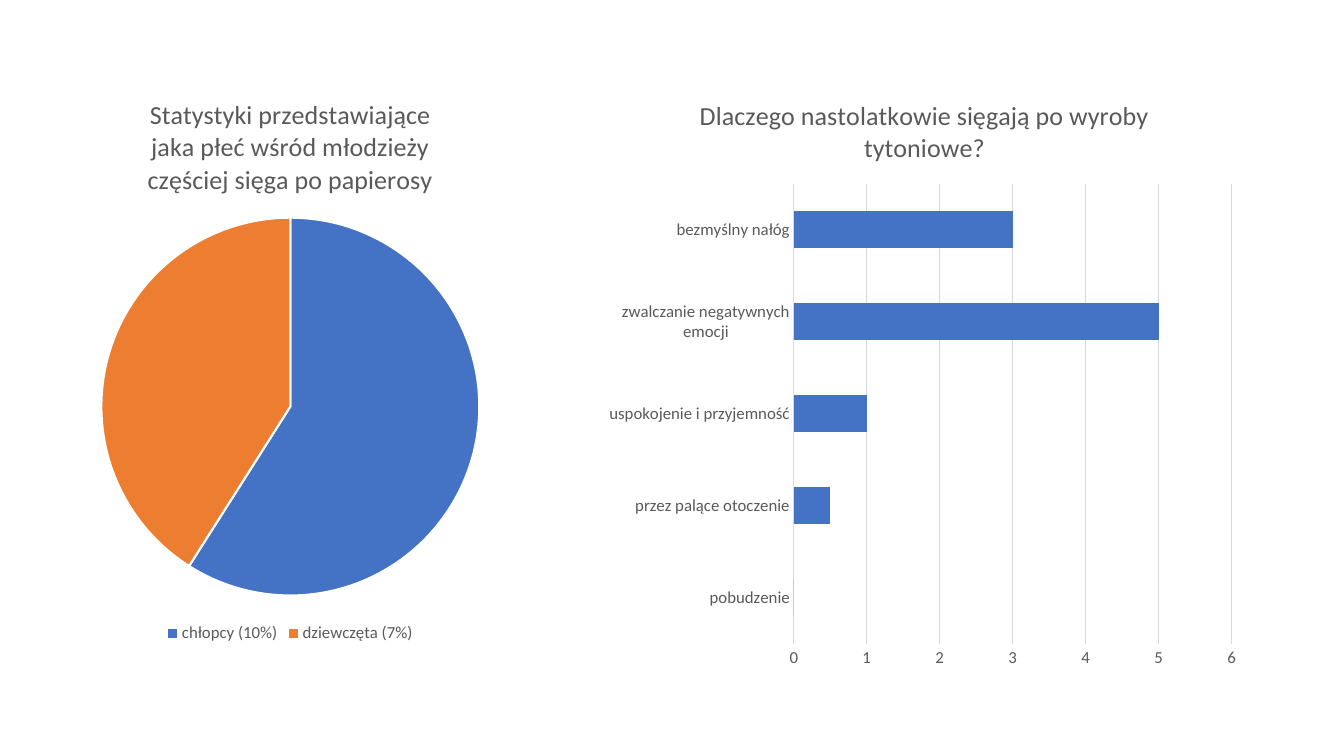
from lxml import etree
from pptx import Presentation
from pptx import util as u
from pptx.chart.data import CategoryChartData
from pptx.dml.color import RGBColor
from pptx.enum import chart as kinds
from pptx.oxml.ns import qn

theme = {
    "font": "Calibri", "title": 18.6, "label": 12,
    "text": RGBColor.from_string("595959"),
    "grid": RGBColor.from_string("D9D9D9"),
    "blue": RGBColor.from_string("4472C4"),
    "orange": RGBColor.from_string("ED7D31"),
    "white": RGBColor.from_string("FFFFFF"),
}

deck = Presentation()
deck.slide_width, deck.slide_height = u.Inches(13.33), u.Inches(7.5)
page = deck.slides.add_slide(deck.slide_layouts[6])


def style_font(font, size):
    font.name = theme["font"]
    font.size = u.Pt(size)
    font.bold = False
    font.color.rgb = theme["text"]


def add_titled_chart(kind, title, values, frame, plot):
    data = CategoryChartData()
    data.categories = list(values)
    data.add_series(title, list(values.values()))
    left, top, width, height = (u.Inches(length) for length in frame)
    chart = page.shapes.add_chart(kind, left, top, width, height, data).chart
    style_font(chart.font, theme["label"])
    chart.has_title = True
    box = chart.chart_title.text_frame
    box.text = title
    style_font(box.paragraphs[0].runs[0].font, theme["title"])
    chart.chart_title.include_in_layout = False

    area = chart.element.find(".//" + qn("c:plotArea"))
    for layout in area.findall(qn("c:layout")):
        area.remove(layout)
    layout = etree.Element(qn("c:layout"))
    manual = etree.SubElement(layout, qn("c:manualLayout"))
    settings = [("layoutTarget", "inner"), ("xMode", "edge"), ("yMode", "edge"), *zip("xywh", plot)]
    for name, value in settings:
        etree.SubElement(manual, qn("c:" + name)).set("val", str(value))
    area.insert(0, layout)
    return chart


gender = add_titled_chart(
    kinds.XL_CHART_TYPE.PIE,
    "Statystyki przedstawiające jaka płeć wśród młodzieży częściej sięga po papierosy",
    {"chłopcy (10%)": 59, "dziewczęta (7%)": 41},
    (0.84, 0.74, 4.08, 5.68), (0.04, 0.25, 0.92, 0.66))
gender.has_legend = True
gender.legend.position = kinds.XL_LEGEND_POSITION.BOTTOM
gender.legend.include_in_layout = False
style_font(gender.legend.font, theme["label"])
gender.plots[0].vary_by_categories = True
for index, name in enumerate(("blue", "orange")):
    look = gender.plots[0].series[0].points[index].format
    look.fill.solid()
    look.fill.fore_color.rgb = theme[name]
    look.line.color.rgb = theme["white"]
    look.line.width = u.Pt(1.5)

reasons = add_titled_chart(
    kinds.XL_CHART_TYPE.BAR_CLUSTERED,
    "Dlaczego nastolatkowie sięgają po wyroby tytoniowe?",
    {"pobudzenie": 0, "przez palące otoczenie": 0.5, "uspokojenie i przyjemność": 1,
     "zwalczanie negatywnych emocji": 5, "bezmyślny nałóg": 3},
    (5.93, 0.74, 6.48, 6.01), (0.3, 0.18, 0.67, 0.76))
reasons.has_legend = False
bars = reasons.plots[0]
bars.gap_width = 150
bars.vary_by_categories = False
bars.series[0].format.fill.solid()
bars.series[0].format.fill.fore_color.rgb = theme["blue"]
for axis in (reasons.category_axis, reasons.value_axis):
    axis.major_tick_mark = axis.minor_tick_mark = kinds.XL_TICK_MARK.NONE
    axis.format.line.fill.background()
    style_font(axis.tick_labels.font, theme["label"])
reasons.category_axis.has_major_gridlines = False
scale = reasons.value_axis
scale.minimum_scale, scale.maximum_scale, scale.major_unit = 0, 6, 1
scale.has_major_gridlines = True
scale.major_gridlines.format.line.color.rgb = theme["grid"]
scale.major_gridlines.format.line.width = u.Pt(0.75)

deck.save("out.pptx")
